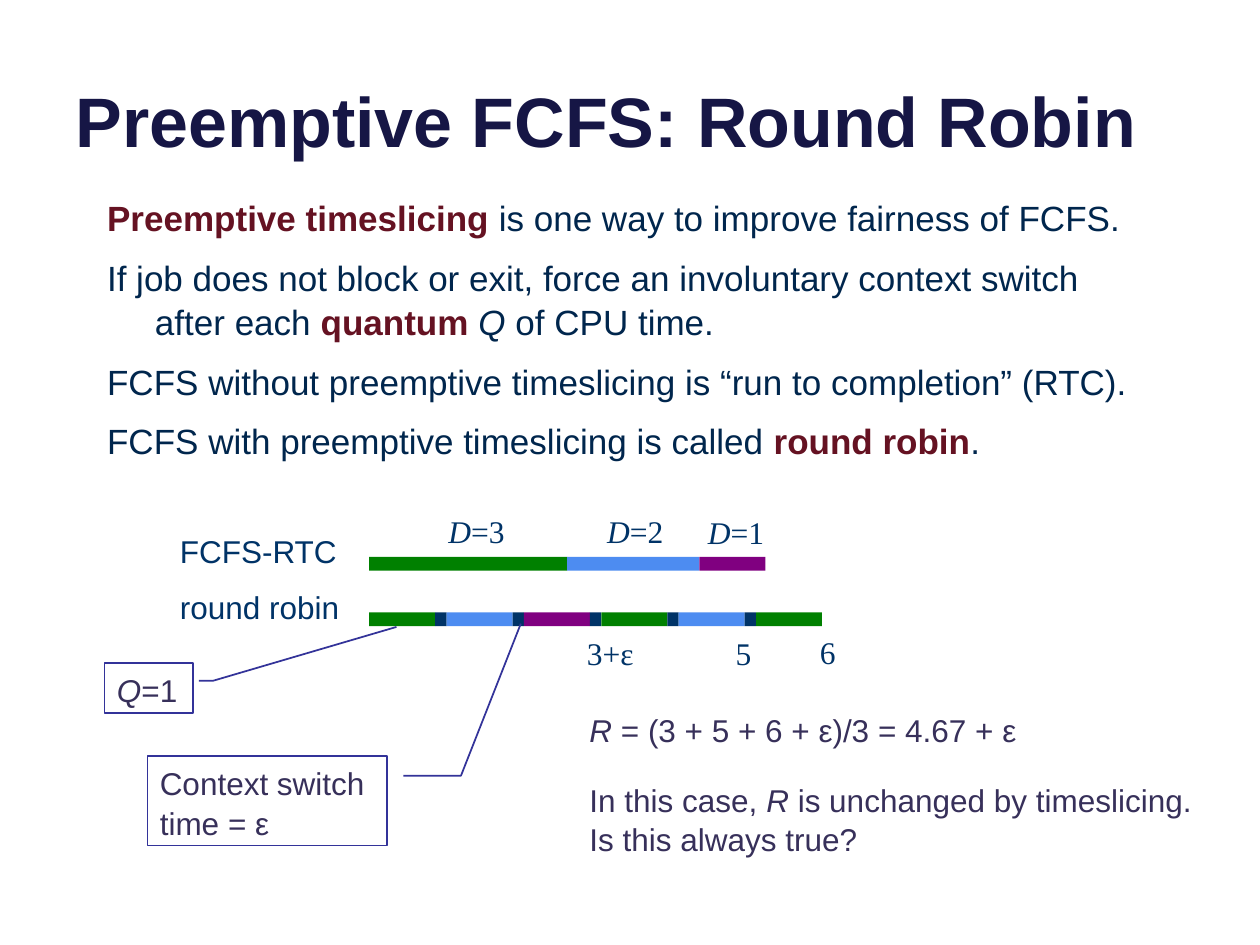
import pptx
import pptx.dml.color
import pptx.enum.shapes
import pptx.enum.text
import pptx.oxml
import pptx.util

RGBColor = pptx.dml.color.RGBColor
SHAPES = pptx.enum.shapes.MSO_SHAPE
ANCHOR = pptx.enum.text.MSO_ANCHOR
AUTO_SIZE = pptx.enum.text.MSO_AUTO_SIZE
ALIGN = pptx.enum.text.PP_ALIGN

NAVY = RGBColor(0x16, 0x16, 0x45)
INK = RGBColor(0x00, 0x26, 0x4D)
MAROON = RGBColor(0x65, 0x12, 0x22)
BLUE = RGBColor(0x00, 0x33, 0x67)
PLUM = RGBColor(0x37, 0x30, 0x5A)
FRAME = RGBColor(0x33, 0x33, 0x99)
WHITE = RGBColor(0xFF, 0xFF, 0xFF)
JOB_1 = RGBColor(0x00, 0x80, 0x00)
JOB_2 = RGBColor(0x4D, 0x8C, 0xF1)
JOB_3 = RGBColor(0x80, 0x00, 0x80)

SANS, SERIF = "Arial", "Times New Roman"
COLUMNS, ROWS = 100, 75


class SlideBuilder:
    """Holds the style and the slide; lengths are grid columns and rows."""

    line_spacing = 1.05
    label_size = 18

    def __init__(self, presentation):
        self.column = presentation.slide_width / COLUMNS
        self.row = presentation.slide_height / ROWS
        self.slide = presentation.slides.add_slide(presentation.slide_layouts[1])

    def box(self, left, top, width, height):
        return (round(left * self.column), round(top * self.row),
                round(width * self.column), round(height * self.row))

    def add_text(self, frame, paragraphs, size, color, font=SANS, gaps=()):
        """Each paragraph is a list of (text, style) runs; style holds b, i, m."""
        for index, runs in enumerate(paragraphs):
            paragraph = frame.paragraphs[0] if index == 0 else frame.add_paragraph()
            paragraph.alignment = ALIGN.LEFT
            paragraph.line_spacing = self.line_spacing
            paragraph.space_before = pptx.util.Pt(gaps[index] if gaps else 0)
            for text, style in runs:
                run = paragraph.add_run()
                run.text = text
                run.font.name = font
                run.font.size = pptx.util.Pt(size)
                run.font.bold = "b" in style
                run.font.italic = "i" in style
                run.font.color.rgb = MAROON if "m" in style else color

    def placeholder(self, index, box, paragraphs, size, color, anchor, gaps=()):
        shape = self.slide.placeholders[index]
        shape.left, shape.top, shape.width, shape.height = self.box(*box)
        frame = shape.text_frame
        frame.auto_size = AUTO_SIZE.NONE
        frame.vertical_anchor = anchor
        self.add_text(frame, paragraphs, size, color, gaps=gaps)
        return frame

    def title(self, box, text):
        frame = self.placeholder(0, box, [[(text, "b")]], 40, NAVY, ANCHOR.BOTTOM)
        frame.paragraphs[0].line_spacing = 1.0

    def body(self, box, paragraphs):
        frame = self.placeholder(1, box, paragraphs, 20, INK, ANCHOR.TOP,
                                 gaps=[9] * len(paragraphs))
        indent = pptx.util.Inches(0.38)
        for paragraph in frame.paragraphs:
            properties = paragraph._p.get_or_add_pPr()
            properties.set("marL", str(indent))
            properties.set("indent", str(-indent))
            properties.append(pptx.oxml.parse_xml(
                '<a:buNone xmlns:a="http://schemas.openxmlformats.org/drawingml/2006/main"/>'))

    def fit(self, frame):
        frame.word_wrap = False
        frame.auto_size = AUTO_SIZE.SHAPE_TO_FIT_TEXT
        frame.vertical_anchor = ANCHOR.TOP

    def label(self, box, paragraphs, color=BLUE, font=SANS, gaps=()):
        frame = self.slide.shapes.add_textbox(*self.box(*box)).text_frame
        self.fit(frame)
        self.add_text(frame, paragraphs, self.label_size, color, font, gaps)

    def shape(self, kind, box, fill):
        shape = self.slide.shapes.add_shape(kind, *self.box(*box))
        shape.shadow.inherit = False
        shape.fill.solid()
        shape.fill.fore_color.rgb = fill
        return shape

    def bar(self, left, top, width, fill):
        self.shape(SHAPES.RECTANGLE, (left, top, width, 1.1), fill).line.fill.background()

    def callout(self, box, adjustments, paragraphs):
        shape = self.shape(SHAPES.LINE_CALLOUT_2, box, WHITE)
        shape.line.color.rgb = FRAME
        shape.line.width = pptx.util.Pt(1)
        for index, value in enumerate(adjustments):
            shape.adjustments[index] = value
        self.fit(shape.text_frame)
        self.add_text(shape.text_frame, paragraphs, self.label_size, PLUM)


def main():
    presentation = pptx.Presentation()
    presentation.slide_width = pptx.util.Inches(10)
    presentation.slide_height = pptx.util.Inches(7.5)
    builder = SlideBuilder(presentation)

    # Title and points
    builder.title((5, -3.7, 90, 17), "Preemptive FCFS: Round Robin")
    builder.body((7.5, 14.9, 85, 21.3), [
        [("Preemptive timeslicing", "bm"), (" is one way to improve fairness of FCFS.", "")],
        [("If job does not block or exit, force an involuntary context switch after each ", ""),
         ("quantum ", "bm"), ("Q", "i"), (" of CPU time.", "")],
        [("FCFS without preemptive timeslicing is “run to completion” (RTC).", "")],
        [("FCFS with preemptive timeslicing is called ", ""), ("round robin", "bm"), (".", "")],
    ])

    # Timelines: one quantum and one context switch, in columns
    start, quantum, switch = 29.3, 5.24, 0.9
    rtc_top, robin_top = 44.2, 48.6

    # Run to completion: each job is as long as its demand
    left = start
    for demand, color, label_left, label_top in (
            (3, JOB_1, 34.6, 40), (2, JOB_2, 47.2, 40), (1, JOB_3, 55.2, 40.1)):
        builder.bar(left, rtc_top, demand * quantum, color)
        builder.label((label_left, label_top, 6.7, 4),
                      [[("D", "i"), (f"={demand}", "")]], font=SERIF)
        left += demand * quantum

    # Round robin: one quantum per turn, with a switch between turns
    turns = (JOB_1, JOB_2, JOB_3, JOB_1, JOB_2, JOB_1)
    for turn, color in enumerate(turns):
        left = start + turn * (quantum + switch)
        builder.bar(left, robin_top, quantum, color)
        if turn < len(turns) - 1:
            builder.bar(left + quantum, robin_top, switch, BLUE)

    # Completion times
    for text, left, top, width in (
            ("3+ε", 45.6, 49.7, 5.8), ("5", 57.4, 49.7, 3.3), ("6", 64.1, 49.6, 3.3)):
        builder.label((left, top, width, 4), [[(text, "")]], font=SERIF)

    # Timeline names
    for text, top, width in (("FCFS-RTC", 41.6, 14.6), ("round robin", 46, 14.8)):
        builder.label((13.3, top, width, 4), [[(text, "")]])

    # Mean response time
    builder.label((45.8, 55.8, 50.4, 12.5), [
        [("R", "i"), (" = (3 + 5 + 6 + ε)/3 = 4.67 + ε", "")],
        [("In this case, ", ""), ("R", "i"), (" is unchanged by timeslicing.", "")],
        [("Is this always true?", "")],
    ], color=PLUM, gaps=(0, 17, 0))

    # Callouts
    builder.callout((8.3, 52.6, 7, 4), (0.36, 1.07, 0.36, 1.23, -0.71, 3.31),
                    [[("Q", "i"), ("=1", "")]])
    builder.callout((11.7, 60, 19, 7.1), (0.22, 1.07, 0.22, 1.31, -1.48, 1.56),
                    [[("Context switch", "")], [("time = ε", "")]])

    presentation.save("out.pptx")


if __name__ == "__main__":
    main()
